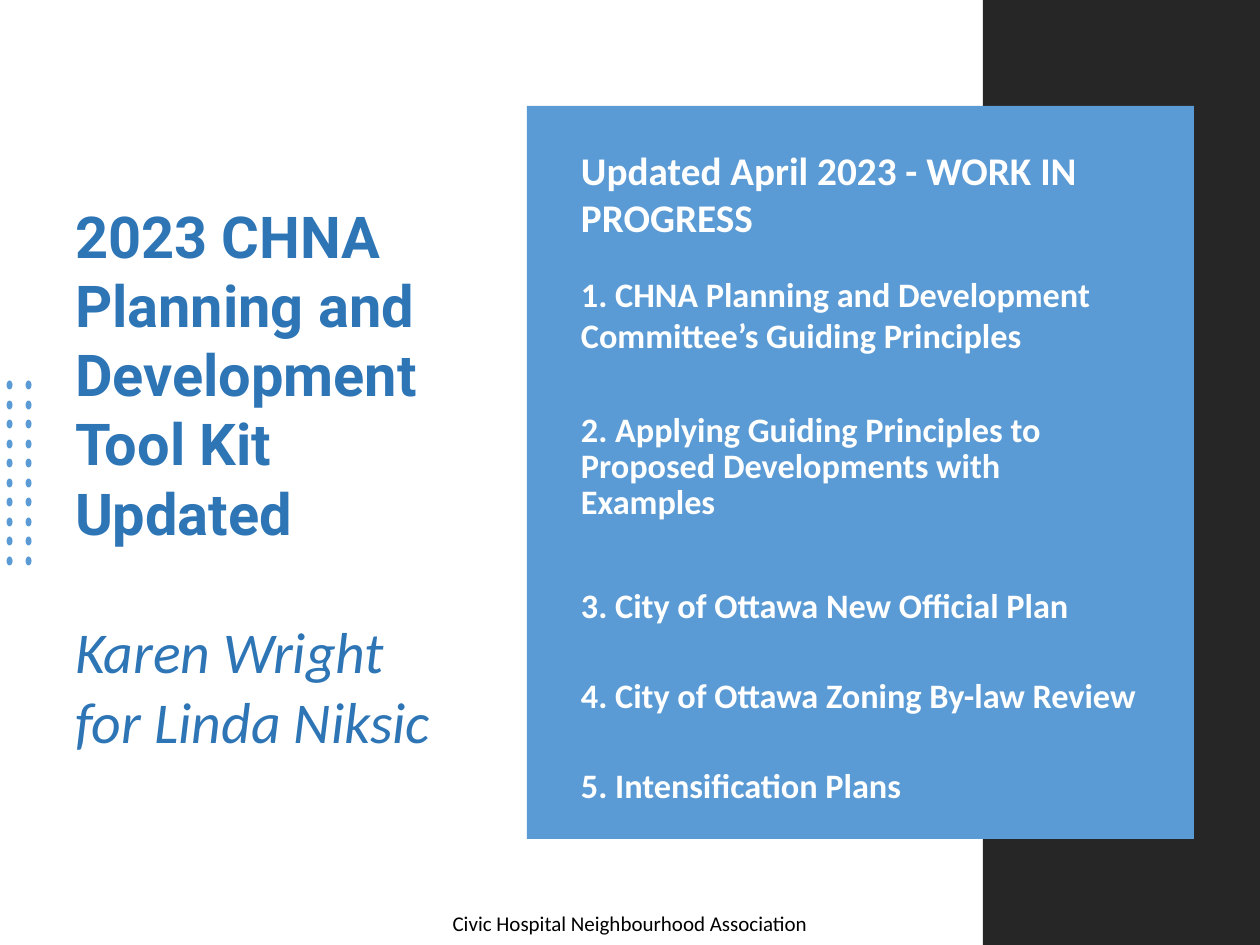
from dataclasses import dataclass

from lxml.etree import SubElement
from pptx import Presentation
from pptx.dml.color import RGBColor
from pptx.enum.shapes import MSO_SHAPE as Shape
from pptx.enum.text import MSO_ANCHOR as Anchor, MSO_AUTO_SIZE as AutoSize, PP_ALIGN as Align
from pptx.oxml.ns import qn
from pptx.util import Emu, Pt

EMU_PER_PX = 914400 / 126


def px(length):
    return Emu(round(length * EMU_PER_PX))


@dataclass(frozen=True)
class Theme:
    title_color: str = "2E75B6"
    panel: str = "5B9BD5"
    band: str = "262626"
    light: str = "FFFFFF"
    dark: str = "000000"
    title_font: str = "Roboto"
    body_font: str = "Calibri"
    title_size: float = 33
    heading_size: float = 22.4
    item_size: float = 19.6
    footer_size: float = 12


@dataclass(frozen=True)
class Line:
    """One paragraph; leading and gap (the space before it) are in points."""
    text: str
    size: float
    color: str
    font: str
    leading: float = None
    gap: float = 0
    bold: bool = False
    italic: bool = False
    align: Align = Align.LEFT


class SlideBuilder:
    def __init__(self, slide, theme):
        self.slide = slide
        self.theme = theme

    def shape(self, kind, left, top, width, height, color, parent=None):
        shapes = (parent or self.slide).shapes
        shape = shapes.add_shape(kind, px(left), px(top), px(width), px(height))
        shape.shadow.inherit = False
        shape.fill.solid()
        shape.fill.fore_color.rgb = RGBColor.from_string(color)
        shape.line.fill.background()
        return shape

    def dot_grid(self, left, top, columns, rows, column_gap, height):
        group = self.slide.shapes.add_group_shape()
        for row in range(rows):
            for column in range(columns):
                dot = self.shape(Shape.OVAL, left + column * column_gap,
                                 top + round(row * height / (rows - 1)),
                                 9, 6, self.theme.panel, group)
                dot.rotation = 90

    def placeholder(self, index, left, top, width, height, lines, insets):
        box = self.slide.placeholders[index]
        self.slide.shapes._spTree.append(box._element)  # bring to front
        box.left, box.top, box.width, box.height = map(px, (left, top, width, height))
        self.set_lines(box, lines, insets)

    def text_box(self, left, top, width, height, lines, insets):
        box = self.slide.shapes.add_textbox(px(left), px(top), px(width), px(height))
        self.set_lines(box, lines, insets)

    def set_lines(self, box, lines, insets):
        """Fill the box with lines; insets are left, top, right, bottom."""
        frame = box.text_frame
        frame.word_wrap = True
        frame.auto_size = AutoSize.NONE
        frame.vertical_anchor = Anchor.MIDDLE
        (frame.margin_left, frame.margin_top,
         frame.margin_right, frame.margin_bottom) = map(px, insets)
        frame.text = "\n".join(line.text for line in lines)
        for para, line in zip(frame.paragraphs, lines):
            properties = para._p.get_or_add_pPr()
            properties.set("marL", "0")
            properties.set("indent", "0")
            SubElement(properties, qn("a:buNone"))
            para.alignment = line.align
            para.space_before = Pt(line.gap)
            para.space_after = Pt(0)
            if line.leading:
                para.line_spacing = Pt(line.leading)
            for span in para.runs:
                span.font.name = line.font
                span.font.size = Pt(line.size)
                span.font.bold = line.bold
                span.font.italic = line.italic
                span.font.color.rgb = RGBColor.from_string(line.color)


def main():
    deck = Presentation()
    deck.slide_width, deck.slide_height = px(1260), px(945)
    theme = Theme()
    page = SlideBuilder(deck.slides.add_slide(deck.slide_layouts[1]), theme)
    wide_insets = (13, 13, 13, 6)

    page.placeholder(0, 62, 144, 393, 660, [
        Line("2023 CHNA Planning and Development Tool Kit Updated", theme.title_size,
             theme.title_color, theme.title_font, leading=39.6, bold=True),
        Line("Karen Wright for Linda Niksic", theme.title_size,
             theme.title_color, theme.body_font, leading=39.6, gap=39.6, italic=True),
    ], wide_insets)

    page.dot_grid(5, 382, columns=2, rows=10, column_gap=19, height=176)
    page.shape(Shape.RECTANGLE, 983, 0, 277, 945, theme.band)
    page.shape(Shape.RECTANGLE, 527, 106, 667, 733, theme.panel)

    items = [
        ("1. CHNA Planning and Development Committee’s Guiding Principles", 23.4, 19),
        ("2. Applying Guiding Principles to Proposed Developments with Examples", 20.6, 33),
        ("3. City of Ottawa New Official Plan", 23.4, 36),
        ("4. City of Ottawa Zoning By-law Review", 23.4, 28),
        ("5. Intensification Plans", 23.4, 28),
    ]
    heading = Line("Updated April 2023 - WORK IN PROGRESS", theme.heading_size,
                   theme.light, theme.body_font, leading=26.9, bold=True)
    agenda = [Line(text, theme.item_size, theme.light, theme.body_font, leading, gap, bold=True)
              for text, leading, gap in items]
    page.placeholder(1, 568, 163, 585, 626, [heading, *agenda], (13, 6, 13, 6))

    page.text_box(417, 895, 426, 50, [
        Line("Civic Hospital Neighbourhood Association", theme.footer_size,
             theme.dark, theme.body_font, align=Align.CENTER),
    ], wide_insets)

    deck.save("out.pptx")


if __name__ == "__main__":
    main()
